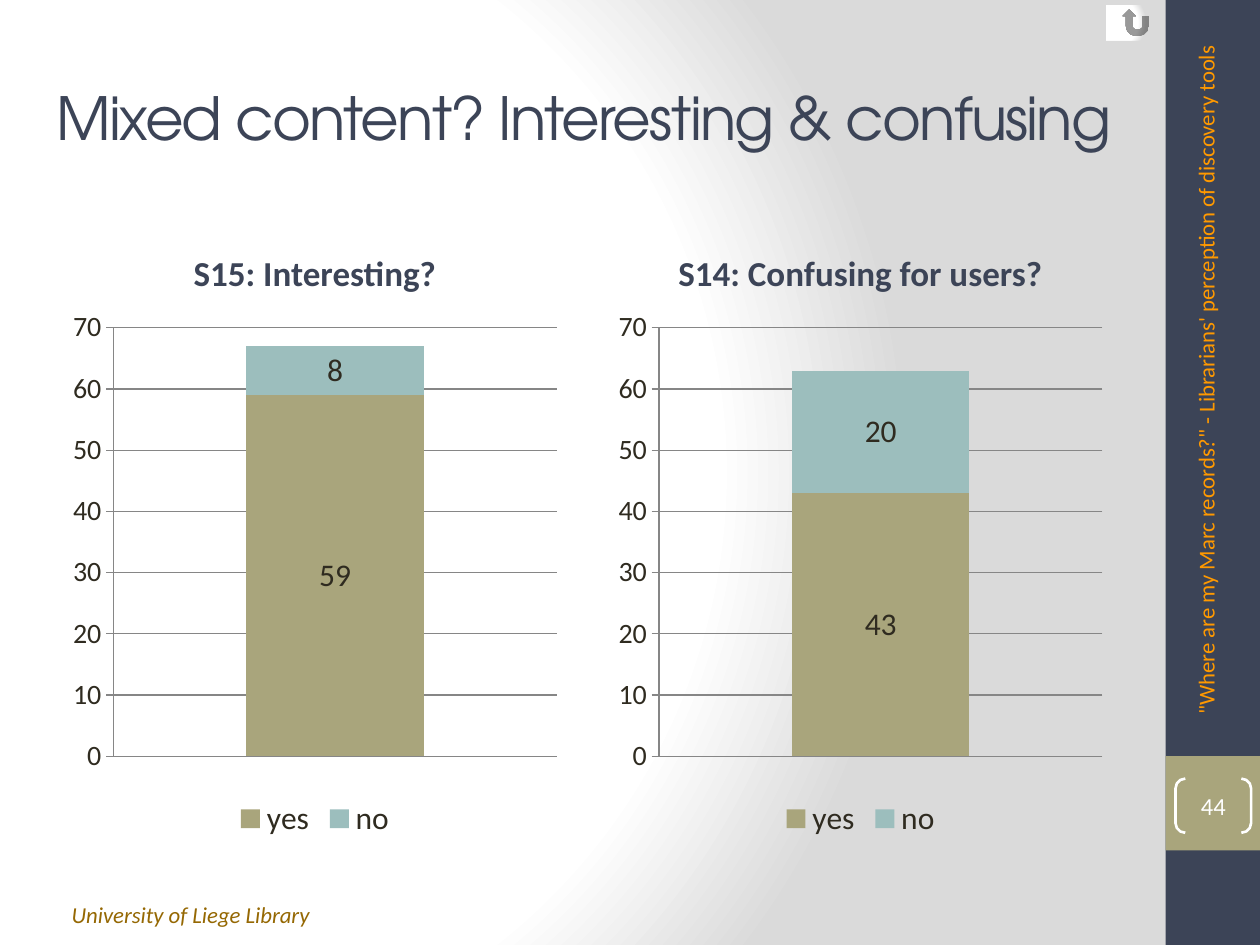
from lxml import etree
from pptx import Presentation
from pptx.chart.data import CategoryChartData
from pptx.dml.color import RGBColor
from pptx.enum.chart import XL_CHART_TYPE, XL_LABEL_POSITION, XL_LEGEND_POSITION, XL_TICK_MARK
from pptx.enum.shapes import MSO_SHAPE
from pptx.enum.text import MSO_ANCHOR, PP_ALIGN
from pptx.oxml import parse_xml
from pptx.oxml.ns import qn
from pptx.util import Inches, Pt

STACKED = XL_CHART_TYPE.COLUMN_STACKED
LABEL_CENTER = XL_LABEL_POSITION.CENTER
LEGEND_BOTTOM = XL_LEGEND_POSITION.BOTTOM
TICK_OUTSIDE = XL_TICK_MARK.OUTSIDE
RECTANGLE = MSO_SHAPE.RECTANGLE
BRACKETS = MSO_SHAPE.DOUBLE_BRACKET
RETURN_BUTTON = MSO_SHAPE.ACTION_BUTTON_RETURN
TOP, MIDDLE, BOTTOM = MSO_ANCHOR.TOP, MSO_ANCHOR.MIDDLE, MSO_ANCHOR.BOTTOM
LEFT, CENTER = PP_ALIGN.LEFT, PP_ALIGN.CENTER

TITLE = "Mixed content? Interesting & confusing"
FOOTER = "University of Liege Library"
SIDE_TEXT = "\"Where are my Marc records?\" - Librarians' perception of discovery tools"
PAGE_NUMBER = "44"
QUESTIONS = [
    ("S15: Interesting?", {"yes": 59, "no": 8}),
    ("S14: Confusing for users?", {"yes": 43, "no": 20}),
]

THEME = {
    "body_font": "Calibri", "title_font": "TeX Gyre Adventor",
    "navy": "3C4457", "olive": "A9A57C", "teal": "9CBEBD", "ink": "2F2B20",
    "gold": "956803", "orange": "FF9900", "white": "FFFFFF", "grey": "DADADA",
    "grid": "868686",
    "title": 34, "heading": 20, "chart": 18, "axis": 16, "number": 14, "small": 13,
}
SERIES_COLORS = {"yes": "olive", "no": "teal"}

SIDEBAR_LEFT, SIDEBAR_WIDTH = 9.25, 0.75
COLUMN_LEFT, COLUMN_STEP, COLUMN_WIDTH = 0.5, 4.33, 4
HEADING_TOP, HEADING_HEIGHT, CHART_HEIGHT = 1.68, 0.7, 4.32


def color(name):
    return RGBColor.from_string(THEME[name])


def inches(box):
    return [Inches(value) for value in box]


def glow_fill():
    stops = "".join(
        f'<a:gs pos="{position * 1000}"><a:srgbClr val="{THEME[name]}"/></a:gs>'
        for position, name in [(0, "white"), (75, "white"), (100, "grey")])
    return parse_xml(
        '<a:gradFill xmlns:a="http://schemas.openxmlformats.org/drawingml/2006/main" '
        f'rotWithShape="1"><a:gsLst>{stops}</a:gsLst><a:path path="circle">'
        '<a:fillToRect l="20000" t="50000" r="100000" b="50000"/></a:path></a:gradFill>')


def apply_glow(fill, parent):
    fill.solid()
    solid = parent.find(".//" + qn("a:solidFill"))
    solid.getparent().replace(solid, glow_fill())


def write(shape, text, size, color_name, font="body_font", align=LEFT, anchor=TOP,
          bold=False, italic=False):
    frame = shape.text_frame
    frame.text = text
    frame.word_wrap = True
    frame.vertical_anchor = anchor
    paragraph = frame.paragraphs[0]
    paragraph.alignment = align
    run = paragraph.runs[0]
    run.font.name = THEME[font]
    run.font.size = Pt(THEME[size])
    run.font.color.rgb = color(color_name)
    run.font.bold = bold
    run.font.italic = italic
    return run


def add_text(slide, box, *content, **style):
    shape = slide.shapes.add_textbox(*inches(box))
    return shape, write(shape, *content, **style)


def add_plain_shape(slide, preset, box, fill=None):
    shape = slide.shapes.add_shape(preset, *inches(box))
    shape.shadow.inherit = False
    shape.line.fill.background()
    if fill:
        shape.fill.solid()
        shape.fill.fore_color.rgb = color(fill)
    else:
        shape.fill.background()
    return shape


def add_answer_chart(slide, box, answers):
    data = CategoryChartData()
    data.categories = ["1"]
    for name, count in answers.items():
        data.add_series(name, [count])
    chart = slide.shapes.add_chart(STACKED, *inches(box), data).chart
    chart.has_title = False
    chart.font.name = THEME["body_font"]
    chart.font.size = Pt(THEME["chart"])
    chart.font.color.rgb = color("ink")
    chart.has_legend = True
    chart.legend.position = LEGEND_BOTTOM
    chart.legend.include_in_layout = False
    chart.category_axis.visible = False

    axis = chart.value_axis
    axis.minimum_scale, axis.maximum_scale, axis.major_unit = 0, 70, 10
    axis.major_tick_mark = TICK_OUTSIDE
    axis.tick_labels.font.size = Pt(THEME["axis"])
    axis.has_major_gridlines = True
    for line in (axis.format.line, axis.major_gridlines.format.line):
        line.color.rgb = color("grid")
        line.width = Pt(0.75)

    plot = chart.plots[0]
    plot.gap_width, plot.overlap = 150, 100
    plot.vary_by_categories = False
    for series in plot.series:
        series.format.fill.solid()
        series.format.fill.fore_color.rgb = color(SERIES_COLORS[series.name])
        series.data_labels.show_value = True
        series.data_labels.position = LABEL_CENTER


def main():
    presentation = Presentation()
    presentation.slide_width, presentation.slide_height = Inches(10), Inches(7.5)
    slide = presentation.slides.add_slide(presentation.slide_layouts[6])
    apply_glow(slide.background.fill, slide.element.find(".//" + qn("p:bg")) if
               slide.element.find(".//" + qn("p:bg")) is not None else slide.element)

    add_plain_shape(slide, RECTANGLE, (SIDEBAR_LEFT, 0, SIDEBAR_WIDTH, 7.5), "navy")
    add_plain_shape(slide, RECTANGLE, (SIDEBAR_LEFT, 6, SIDEBAR_WIDTH, 0.75), "olive")
    add_text(slide, (0.47, 7.1, 5.32, 0.32), FOOTER, "small", "gold", italic=True)
    _, title_run = add_text(slide, (0.35, 0.3, 8.66, 1.25), TITLE, "title", "navy",
                            font="title_font", anchor=MIDDLE)
    title_run.font._element.set("spc", "-100")

    for index, (question, answers) in enumerate(QUESTIONS):
        left = COLUMN_LEFT + index * COLUMN_STEP
        add_text(slide, (left, HEADING_TOP, COLUMN_WIDTH, HEADING_HEIGHT), question,
                 "heading", "navy", align=CENTER, anchor=BOTTOM, bold=True)
        add_answer_chart(slide, (left, HEADING_TOP + HEADING_HEIGHT, COLUMN_WIDTH,
                                 CHART_HEIGHT), answers)

    brackets = add_plain_shape(slide, BRACKETS, (9.33, 6.18, 0.6, 0.43))
    brackets.adjustments[0] = 0.18
    brackets.line.color.rgb = color("white")
    brackets.line.width = Pt(1.5)
    write(brackets, PAGE_NUMBER, "number", "white", align=CENTER, anchor=MIDDLE)
    frame = brackets.text_frame
    frame.margin_left = frame.margin_right = frame.margin_top = frame.margin_bottom = 0

    side_box, _ = add_text(slide, (6.83, 2.79, 5.56, 0.4), SIDE_TEXT, "small", "orange")
    side_box.rotation = 270

    button = add_plain_shape(slide, RETURN_BUTTON, (8.78, 0.04, 0.47, 0.28), "white")
    apply_glow(button.fill, button.element.spPr)
    button.element.spPr.find(qn("a:xfrm")).set("flipH", "1")

    presentation.save("out.pptx")


if __name__ == "__main__":
    main()
